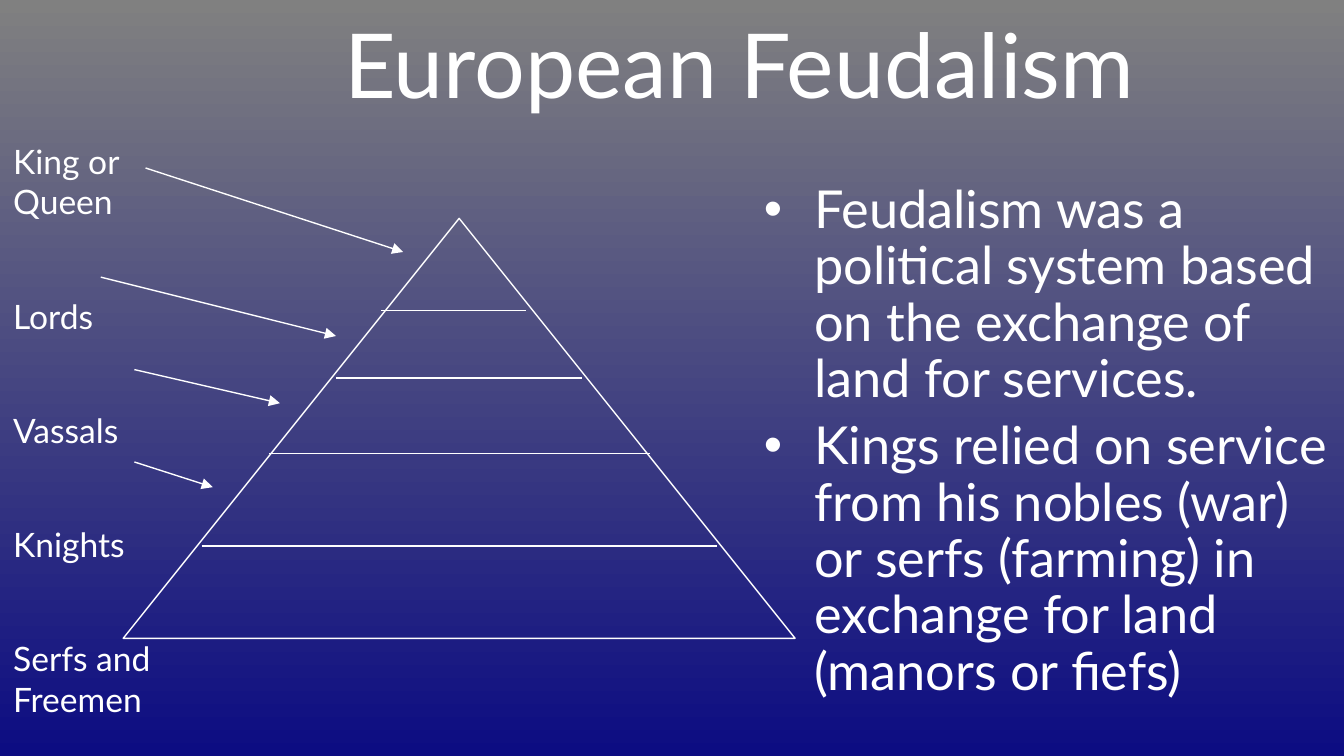
from lxml import etree
from pptx import Presentation
from pptx import util as u
from pptx.dml.color import RGBColor
from pptx.enum import shapes, text
from pptx.oxml.ns import qn

PX = 9525  # EMU in one px
WHITE = RGBColor(0xFF, 0xFF, 0xFF)
GRAY = RGBColor(0x80, 0x80, 0x80)
NAVY = RGBColor(0x0C, 0x0C, 0x82)

TITLE = "European Feudalism"
POINTS = [
    "Feudalism was a political system based on the exchange of land for services.",
    "Kings relied on service from his nobles (war) or serfs (farming) in exchange for land (manors or fiefs)",
]
RANKS = ["King or Queen", "Lords", "Vassals", "Knights", "Serfs and Freemen"]

# Left, right and height of each level line; start and end of each arrow
LEVELS = [(272, 376, 222), (240, 416, 270), (192, 464, 324), (144, 512, 390)]
ARROWS = [(104, 120, 288, 180), (72, 198, 240, 240),
          (96, 264, 200, 288), (96, 330, 152, 348)]


def px(*nums):
    return [u.Emu(n * PX) for n in nums]


def put(obj, vals):
    for key, val in vals.items():
        setattr(obj, key, val)


def place(shape, *box):
    put(shape, dict(zip(("left", "top", "width", "height"), px(*box))))


def paint(slide):
    fill = slide.background.fill
    fill.gradient()
    fill.gradient_angle = 270
    for stop, pos, color in zip(fill.gradient_stops, (0, 1), (GRAY, NAVY)):
        stop.position = pos
        stop.color.rgb = color


def bullet(para):
    props = para._p.get_or_add_pPr()
    props.set("marL", str(36 * PX))
    props.set("indent", str(-36 * PX))
    color = etree.SubElement(props, qn("a:buClr"))
    etree.SubElement(color, qn("a:srgbClr"), val=str(WHITE))
    etree.SubElement(props, qn("a:buChar"), char="•")


def write(shape, lines, size, gap=0, marks=False, anchor=text.MSO_ANCHOR.TOP, **form):
    frame = shape.text_frame
    put(frame, {"word_wrap": True, "auto_size": text.MSO_AUTO_SIZE.NONE,
                "vertical_anchor": anchor})
    for i, line in enumerate(lines):
        para = frame.add_paragraph() if i else frame.paragraphs[0]
        if marks:
            bullet(para)
        put(para, {"space_before": u.Pt(gap if i else 0), **form})
        run = para.add_run()
        run.text = line
        put(run.font, {"name": "Lato", "size": u.Pt(size)})
        run.font.color.rgb = WHITE


def stroke(shape):
    shape.line.color.rgb = WHITE
    shape.line.width = u.Pt(0.75)


def rule(slide, ends, head=False):
    line = slide.shapes.add_connector(shapes.MSO_CONNECTOR.STRAIGHT, *px(*ends))
    stroke(line)
    if head:
        etree.SubElement(line.line._get_or_add_ln(), qn("a:tailEnd"), type="triangle")
    etree.SubElement(line._element.spPr, qn("a:effectLst"))


def main():
    prs = Presentation()
    put(prs, dict(zip(("slide_width", "slide_height"), px(960, 540))))
    slide = prs.slides.add_slide(prs.slide_layouts[1])
    paint(slide)

    # Title and bullet list
    title, body = slide.placeholders
    place(title, 96, 0, 864, 90)
    write(title, [TITLE], 48, anchor=text.MSO_ANCHOR.MIDDLE,
          alignment=text.PP_ALIGN.CENTER)
    place(body, 536, 126, 424, 356)
    write(body, POINTS, 28, gap=5.6, marks=True, line_spacing=0.9)

    # Pyramid and its levels
    peak = slide.shapes.add_shape(
        shapes.MSO_SHAPE.ISOSCELES_TRIANGLE, *px(88, 156, 480, 300))
    peak.shadow.inherit = False
    peak.fill.background()
    stroke(peak)
    for left, right, y in LEVELS:
        rule(slide, (left, y, right, y))

    # Ranks and arrows to the levels
    ranks = slide.shapes.add_textbox(*px(0, 96, 136, 356))
    write(ranks, RANKS, 18, gap=39.6)
    for ends in ARROWS:
        rule(slide, ends, head=True)

    prs.save("out.pptx")


if __name__ == "__main__":
    main()
